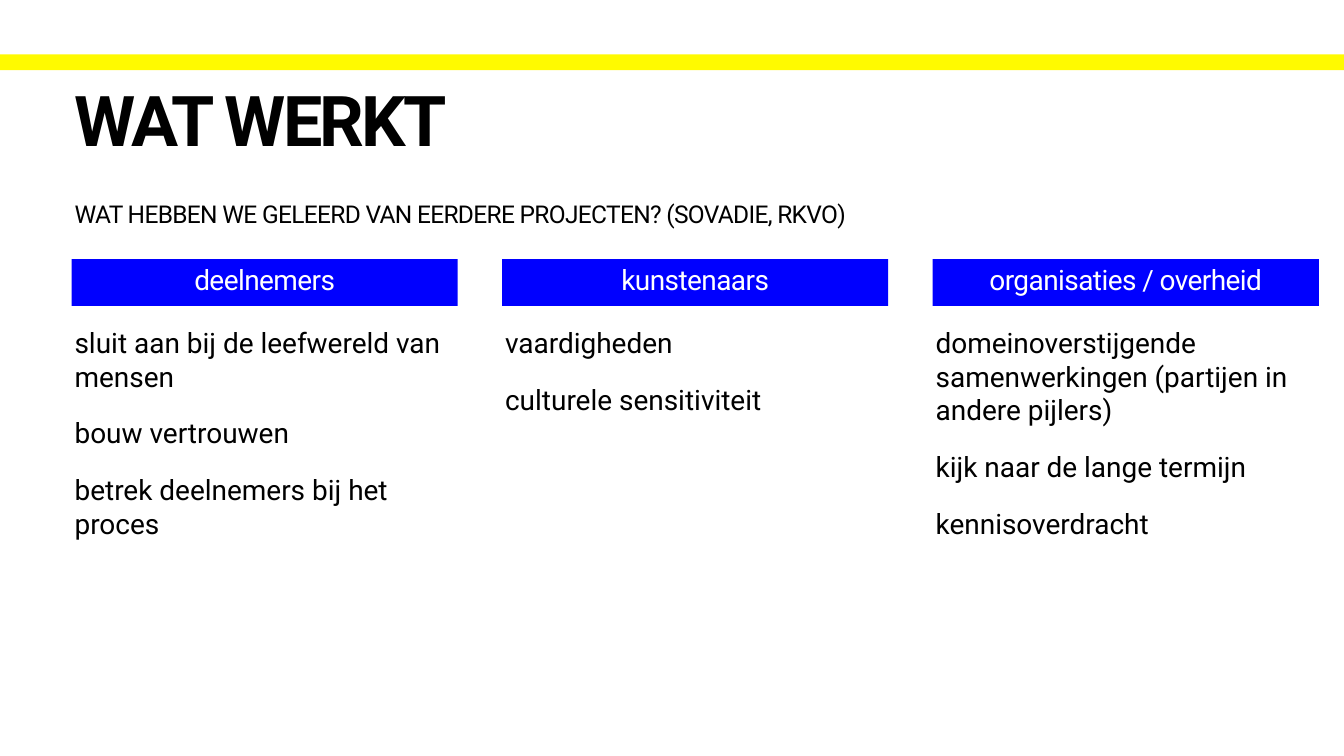
import pptx
import pptx.dml.color
import pptx.enum.shapes
import pptx.enum.text
import pptx.util

Cm = pptx.util.Cm
Pt = pptx.util.Pt
RGB = pptx.dml.color.RGBColor
ALIGN = pptx.enum.text.PP_ALIGN
RECTANGLE = pptx.enum.shapes.MSO_SHAPE.RECTANGLE

theme = {
    "font": "Roboto",
    "yellow": RGB(0xFF, 0xFA, 0x00),
    "blue": RGB(0x00, 0x00, 0xFF),
    "black": RGB(0x00, 0x00, 0x00),
    "white": RGB(0xFF, 0xFF, 0xFF),
    "title": Pt(100),
    "question": Pt(35),
    "body": Pt(40),
}


def add_bar(left, top, width, height, color):
    bar = slide.shapes.add_shape(RECTANGLE, Cm(left), Cm(top), Cm(width), Cm(height))
    bar.shadow.inherit = False
    bar.fill.solid()
    bar.fill.fore_color.rgb = color
    bar.line.fill.background()
    return bar


def write(shape, lines, size, color, tracking=0, bold=False, **paragraph_format):
    frame = shape.text_frame
    frame_format = {
        "word_wrap": True,
        "vertical_anchor": pptx.enum.text.MSO_ANCHOR.TOP,
        "margin_left": Cm(0.15),
        "margin_right": Cm(0.15),
        "margin_top": Cm(0.15),
        "margin_bottom": Cm(0.15),
    }
    for key, value in frame_format.items():
        setattr(frame, key, value)
    for index, line in enumerate(lines):
        paragraph = frame.add_paragraph() if index else frame.paragraphs[0]
        for key, value in paragraph_format.items():
            setattr(paragraph, key, value)
        if index:
            paragraph.space_before = Pt(33)
        run = paragraph.add_run()
        run.text = line
        for key, value in {"name": theme["font"], "size": size, "bold": bold}.items():
            setattr(run.font, key, value)
        run.font.color.rgb = color
        if tracking:
            run._r.get_or_add_rPr().set("spc", str(round(tracking * 100)))


deck = pptx.Presentation()
deck.slide_width = Cm(67.74)
deck.slide_height = Cm(38.1)
slide = deck.slides.add_slide(deck.slide_layouts[6])

margin = 3.61
text_width = 60.76
column_width = 19.46
column_step = 21.7

add_bar(0, 2.74, 67.74, 0.79, theme["yellow"])

title = slide.shapes.add_textbox(Cm(margin), Cm(4.5), Cm(text_width), Cm(4.93))
write(title, ["WAT WERKT"], theme["title"], theme["black"],
      tracking=-4, bold=True, line_spacing=0.8)

question = slide.shapes.add_textbox(Cm(margin), Cm(9.86), Cm(text_width), Cm(1.93))
write(question, ["WAT HEBBEN WE GELEERD VAN EERDERE PROJECTEN? (SOVADIE, RKVO)"],
      theme["question"], theme["black"], tracking=-1)

lessons = {
    "deelnemers": [
        "sluit aan bij de leefwereld van mensen",
        "bouw vertrouwen",
        "betrek deelnemers bij het proces",
    ],
    "kunstenaars": ["vaardigheden", "culturele sensitiviteit"],
    "organisaties / overheid": [
        "domeinoverstijgende samenwerkingen (partijen in andere pijlers)",
        "kijk naar de lange termijn",
        "kennisoverdracht",
    ],
}

for column, (group, advice) in enumerate(lessons.items()):
    left = margin + column * column_step
    group_bar = add_bar(left, 13.06, column_width, 2.36, theme["blue"])
    write(group_bar, [group], theme["body"], theme["white"],
          tracking=-0.8, alignment=ALIGN.CENTER)
    advice_box = slide.shapes.add_textbox(Cm(left), Cm(16.26), Cm(column_width), Cm(19.84))
    write(advice_box, advice, theme["body"], theme["black"])

deck.save("out.pptx")
